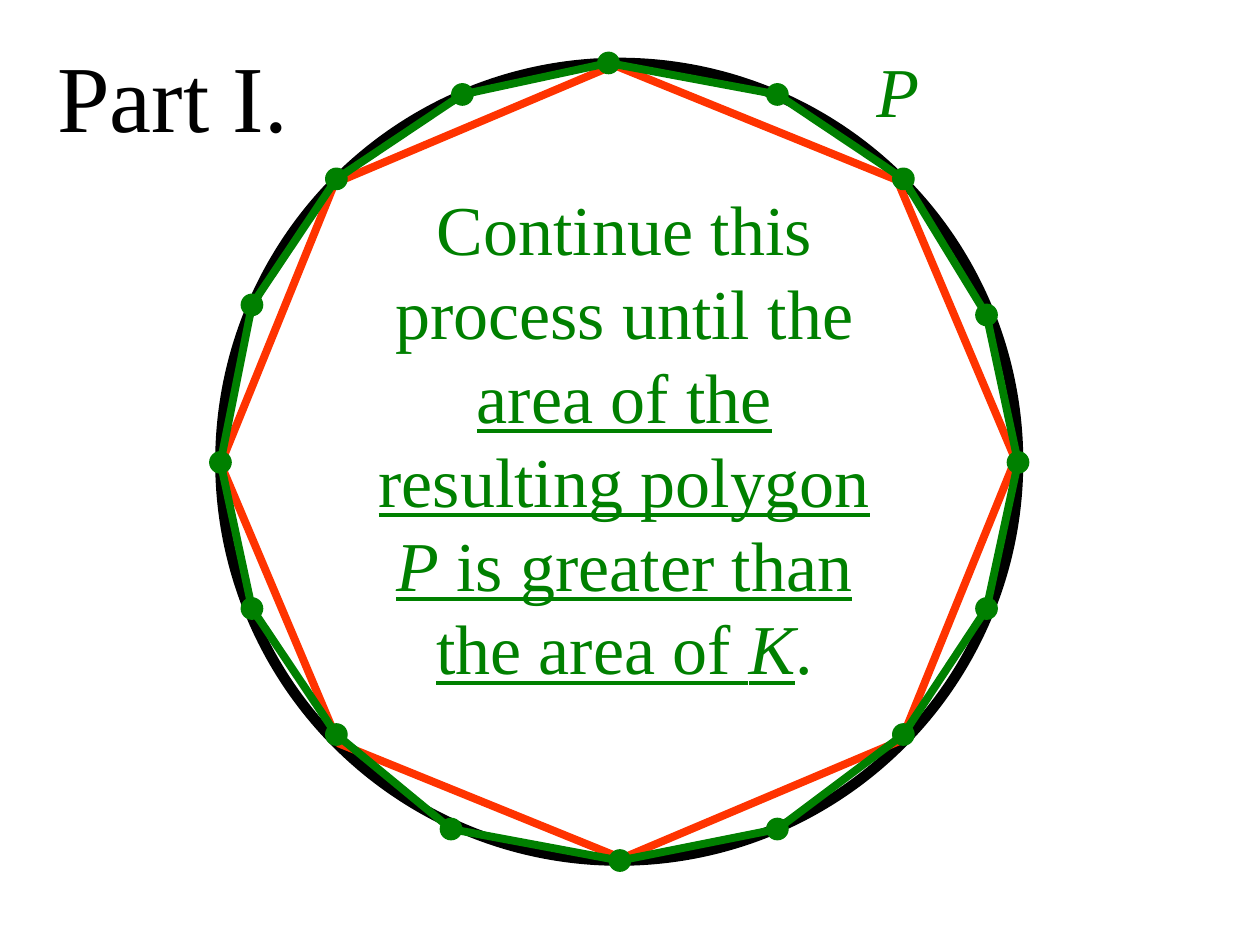
"""Builds the slide on polygons inscribed in a circle."""
from lxml import etree
from pptx import Presentation
from pptx.dml.color import RGBColor
from pptx.enum import shapes, text
from pptx.oxml import ns
from pptx.util import Inches, Pt

BLACK = RGBColor(0x00, 0x00, 0x00)
GREEN = RGBColor(0x00, 0x80, 0x00)
ORANGE = RGBColor(0xFF, 0x33, 0x00)
FONT = "Times New Roman"
DOT = 0.17
VERTICES = [
    (4.83, 0.5), (6.17, 0.75), (7.17, 1.42), (7.83, 2.5),
    (8.08, 3.67), (7.83, 4.83), (7.17, 5.83), (6.17, 6.58),
    (4.92, 6.83), (3.58, 6.58), (2.67, 5.83), (2, 4.83),
    (1.75, 3.67), (2, 2.42), (2.67, 1.42), (3.67, 0.75),
]
TITLE = [("Part I.", False, False)]
LABEL = [("P", True, False)]
STEP = [
    ("Continue this process until the ", False, False),
    ("area of the resulting polygon ", False, True),
    ("P", True, True),
    (" is greater than the area of ", False, True),
    ("K", True, True),
    (".", False, False),
]


def add_outline(page, kind, area, color, width, fill=None):
    shape = page.shapes.add_shape(kind, *map(Inches, area))
    shape.shadow.inherit = False
    shape.line.color.rgb = color
    shape.line.width = Pt(width)
    if fill is None:
        shape.fill.background()
    else:
        shape.fill.solid()
        shape.fill.fore_color.rgb = fill
    return shape


def add_side(page, start, end):
    side = page.shapes.add_connector(
        shapes.MSO_CONNECTOR.STRAIGHT, *map(Inches, start + end))
    side.line.color.rgb = GREEN
    side.line.width = Pt(4.5)
    etree.SubElement(side._element.spPr, ns.qn("a:effectLst"))


def add_text(page, area, spans, size, color):
    box = page.shapes.add_textbox(*map(Inches, area))
    box.text_frame.word_wrap = True
    para = box.text_frame.paragraphs[0]
    para.alignment = text.PP_ALIGN.CENTER
    para.font.name = FONT
    para.font.size = Pt(size)
    para.font.color.rgb = color
    for words, italic, underline in spans:
        span = para.add_run()
        span.text = words
        span.font.italic = italic
        span.font.underline = underline


def main():
    deck = Presentation()
    deck.slide_width, deck.slide_height = Inches(10), Inches(7.5)
    page = deck.slides.add_slide(deck.slide_layouts[6])
    kinds = shapes.MSO_SHAPE

    add_text(page, (0.33, 0.25, 2.08, 1), TITLE, 54, BLACK)
    add_outline(page, kinds.OVAL, (1.75, 0.5, 6.33, 6.33), BLACK, 6)
    octagon = add_outline(
        page, kinds.OCTAGON, (1.99, 0.76, 5.83, 5.81), ORANGE, 4.5)
    octagon.adjustments[0] = 0.293
    octagon.rotation = 22.1

    for start, end in zip(VERTICES, VERTICES[1:] + VERTICES[:1]):
        add_side(page, start, end)
    for x, y in VERTICES:
        area = (x - DOT / 2, y - DOT / 2, DOT, DOT)
        add_outline(page, kinds.OVAL, area, GREEN, 0.75, GREEN)

    add_text(page, (2.83, 1.42, 4.25, 4.1), STEP, 40, GREEN)
    add_text(page, (6.75, 0.33, 0.75, 0.77), LABEL, 40, GREEN)
    deck.save("out.pptx")


if __name__ == "__main__":
    main()
